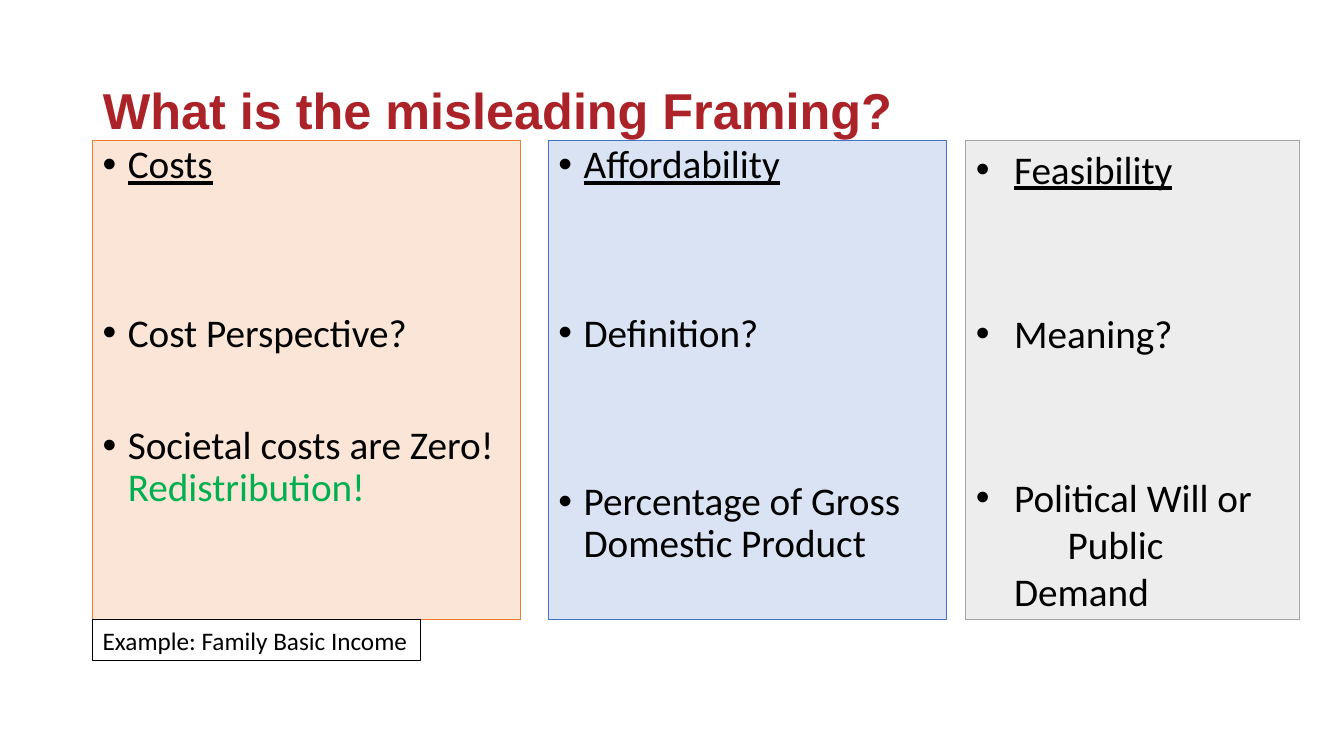
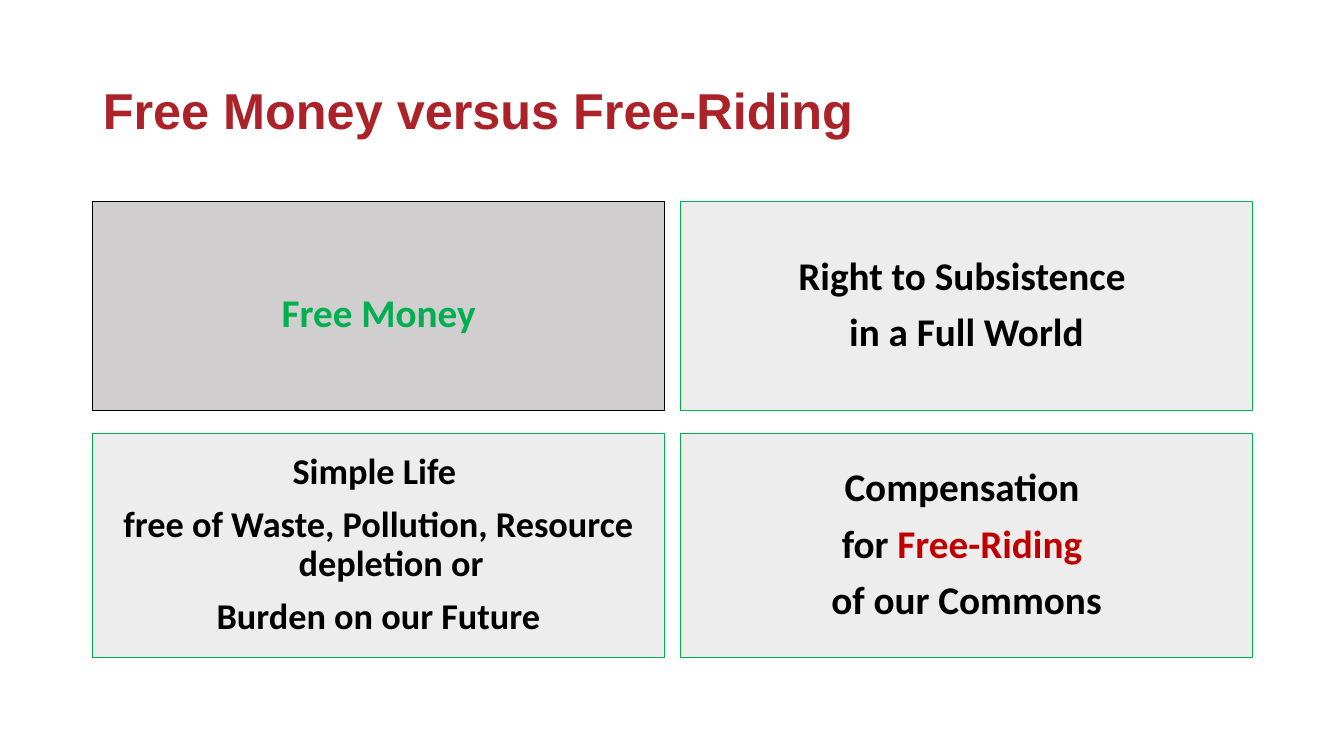
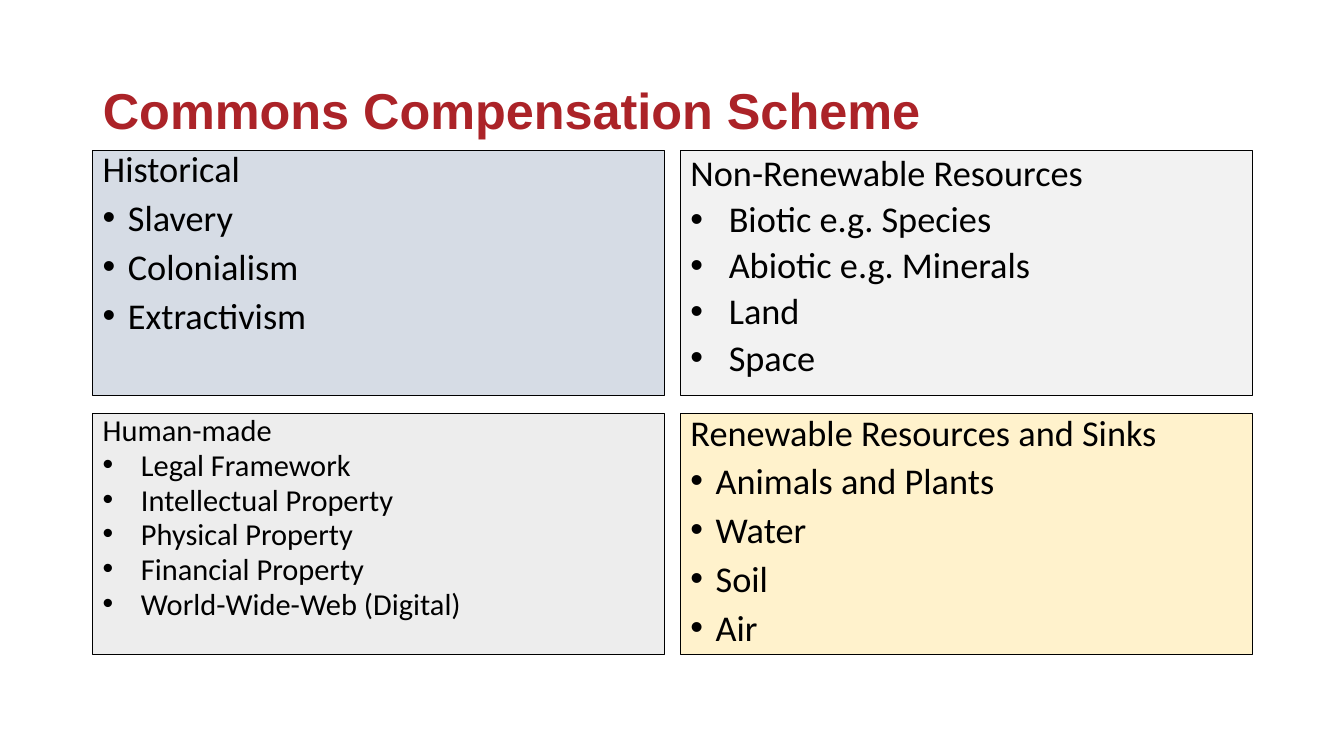
from dataclasses import dataclass
from typing import Sequence

from lxml import etree
from pptx import Presentation
from pptx.dml.color import RGBColor
from pptx.enum.shapes import MSO_SHAPE
from pptx.enum.text import MSO_ANCHOR, MSO_AUTO_SIZE, PP_ALIGN
from pptx.oxml.ns import qn
from pptx.util import Inches, Pt

RECTANGLE = MSO_SHAPE.RECTANGLE
TOP, MIDDLE = MSO_ANCHOR.TOP, MSO_ANCHOR.MIDDLE
LEFT, CENTER = PP_ALIGN.LEFT, PP_ALIGN.CENTER
FIXED_SIZE = MSO_AUTO_SIZE.NONE

# Shared look
TITLE_FONT, BODY_FONT = "Arial", "Calibri"
BLACK, TITLE_RED, GREEN, RED = "000000", "AB2328", "00B050", "C00000"
PALE_GREY = "EDEDED"

# Shared grid, in inches
SLIDE_WIDTH, SLIDE_HEIGHT = 13.33, 7.5
MARGIN, CONTENT_WIDTH = 0.92, 11.5
GUTTER = 0.16
CELL_WIDTH = (CONTENT_WIDTH - GUTTER) / 2
CELL_LEFTS = [MARGIN + column * (CELL_WIDTH + GUTTER) for column in range(2)]


@dataclass
class Line:
    """One paragraph: text, an optional coloured ending and the gap above."""
    text: str
    accent: str = ""
    accent_color: str = BLACK
    bullet: bool = False
    underline: bool = False
    gap: float | None = None
    tab: float | None = None


@dataclass
class Style:
    """Text settings of a panel."""
    size: float = 28
    color: str = BLACK
    bold: bool = False
    align: PP_ALIGN = LEFT
    anchor: MSO_ANCHOR = TOP
    indent: float = 0.25
    spacing: float = 0.9
    gap: float = 10
    top_inset: float = 0.05
    wrap: bool = True


@dataclass
class Panel:
    """A framed rectangle with text."""
    left: float
    top: float
    width: float
    height: float
    fill: str
    border: str
    style: Style
    lines: Sequence[Line]


def rgb(value: str) -> RGBColor:
    return RGBColor.from_string(value)


def bulleted(*texts: str) -> list[Line]:
    return [Line(text, bullet=True) for text in texts]


def format_span(span, size: float, color: str, bold: bool, font: str = BODY_FONT) -> None:
    span.font.name = font
    span.font.size = Pt(size)
    span.font.bold = bold
    span.font.color.rgb = rgb(color)


def set_marks(para, indent: float, bullet: bool, tab: float | None) -> None:
    """Set the hanging indent, bullet and tab stop of a paragraph."""
    properties = para._p.get_or_add_pPr()
    properties.set("marL", str(Inches(indent)))
    properties.set("indent", str(-Inches(indent)))
    if bullet:
        etree.SubElement(properties, qn("a:buFont"), typeface="Arial")
        etree.SubElement(properties, qn("a:buChar"), char="•")
    else:
        etree.SubElement(properties, qn("a:buNone"))
    if tab is not None:
        stops = etree.SubElement(properties, qn("a:tabLst"))
        etree.SubElement(stops, qn("a:tab"), pos=str(Inches(tab)), algn="l")


def write_line(para, line: Line, style: Style, first: bool) -> None:
    para.text = line.text
    set_marks(para, style.indent, line.bullet, line.tab)
    para.alignment = style.align
    para.line_spacing = style.spacing
    if not first:
        para.space_before = Pt(style.gap if line.gap is None else line.gap)
    for span in para.runs:
        format_span(span, style.size, style.color, style.bold)
        span.font.underline = line.underline
    if line.accent:
        span = para.add_run()
        span.text = line.accent
        format_span(span, style.size, line.accent_color, style.bold)


def draw_panel(page, panel: Panel) -> None:
    box = page.shapes.add_shape(
        RECTANGLE, Inches(panel.left), Inches(panel.top),
        Inches(panel.width), Inches(panel.height))
    box.shadow.inherit = False
    if panel.fill:
        box.fill.solid()
        box.fill.fore_color.rgb = rgb(panel.fill)
    else:
        box.fill.background()
    box.line.color.rgb = rgb(panel.border)
    box.line.width = Pt(0.75)
    frame = box.text_frame
    frame.word_wrap = panel.style.wrap
    frame.vertical_anchor = panel.style.anchor
    frame.margin_top = Inches(panel.style.top_inset)
    for index, line in enumerate(panel.lines):
        para = frame.add_paragraph() if index else frame.paragraphs[0]
        write_line(para, line, panel.style, first=index == 0)


def add_page(deck, title: str, panels: Sequence[Panel]) -> None:
    page = deck.slides.add_slide(deck.slide_layouts[5])
    heading = page.shapes.title
    heading.left, heading.top = Inches(MARGIN), Inches(0.4)
    heading.width, heading.height = Inches(CONTENT_WIDTH), Inches(1.45)
    frame = heading.text_frame
    frame.text = title
    frame.auto_size = FIXED_SIZE
    frame.vertical_anchor = MIDDLE
    para = frame.paragraphs[0]
    para.alignment = LEFT
    para.line_spacing = 0.9
    format_span(para.runs[0], 36, TITLE_RED, True, TITLE_FONT)
    for panel in panels:
        draw_panel(page, panel)


def framing_panels() -> list[Panel]:
    top, height = 1.39, 4.76
    plain = Style()
    loose = Style(indent=0.38, spacing=1)
    caption = Style(size=18, indent=0, spacing=1, wrap=False)
    costs = [
        Line("Costs", bullet=True, underline=True),
        Line("Cost Perspective?", bullet=True, gap=90),
        Line("Societal costs are Zero! ", "Redistribution!", GREEN, bullet=True, gap=50),
    ]
    affordability = [
        Line("Affordability", bullet=True, underline=True),
        Line("Definition?", bullet=True, gap=90),
        Line("Percentage of Gross Domestic Product", bullet=True, gap=90),
    ]
    feasibility = [
        Line("Feasibility", bullet=True, underline=True),
        Line("Meaning?", bullet=True, gap=83.5),
        Line("Political Will or\v\tPublic Demand", bullet=True, gap=83.5, tab=0.91),
    ]
    return [
        Panel(MARGIN, top, 4.24, height, "FBE5D6", "ED7D31", plain, costs),
        Panel(5.44, top, 3.95, height, "DAE3F3", "4472C4", plain, affordability),
        Panel(9.58, top, 3.31, height, PALE_GREY, "A5A5A5", loose, feasibility),
        Panel(MARGIN, top + height, 3.25, 0.4, "", BLACK, caption,
              [Line("Example: Family Basic Income")]),
    ]


def free_riding_panels() -> list[Panel]:
    (upper, upper_height), (lower, lower_height) = (2, 2.07), (4.3, 2.22)
    left, right = CELL_LEFTS
    bold = Style(bold=True, align=CENTER, anchor=MIDDLE)
    small = Style(size=25.9, bold=True, align=CENTER, anchor=MIDDLE)
    green = Style(color=GREEN, bold=True, align=CENTER, anchor=MIDDLE, top_inset=0.23)
    simple_life = [
        Line("Simple Life "),
        Line("free of Waste, Pollution, Resource depletion or"),
        Line("Burden on our Future"),
    ]
    compensation = [
        Line("Compensation "),
        Line("for ", "Free-Riding ", RED),
        Line("of our Commons"),
    ]
    subsistence = [Line("Right to Subsistence "), Line("in a Full World")]
    return [
        Panel(left, upper, CELL_WIDTH, upper_height, "D0CECE", BLACK, green,
              [Line("Free Money")]),
        Panel(left, lower, CELL_WIDTH, lower_height, PALE_GREY, GREEN, small, simple_life),
        Panel(right, upper, CELL_WIDTH, upper_height, PALE_GREY, GREEN, bold, subsistence),
        Panel(right, lower, CELL_WIDTH, lower_height, PALE_GREY, GREEN, bold, compensation),
    ]


def commons_panels() -> list[Panel]:
    (upper, upper_height), (lower, lower_height) = (1.49, 2.43), (4.1, 2.39)
    left, right = CELL_LEFTS
    tight = Style(size=25.9, spacing=0.8)
    wide = Style(size=25.9, indent=0.38, gap=5)
    small = Style(size=21.7, indent=0.38, spacing=0.8, gap=4)
    historical = [Line("Historical"), *bulleted("Slavery", "Colonialism", "Extractivism")]
    human_made = [Line("Human-made"), *bulleted(
        "Legal Framework", "Intellectual Property", "Physical Property",
        "Financial Property", "World-Wide-Web (Digital)")]
    finite = [Line("Non-Renewable Resources"), *bulleted(
        "Biotic e.g. Species", "Abiotic e.g. Minerals", "Land", "Space")]
    renewable = [Line("Renewable Resources and Sinks"), *bulleted(
        "Animals and Plants", "Water", "Soil", "Air")]
    return [
        Panel(left, upper, CELL_WIDTH, upper_height, "D6DCE5", BLACK, tight, historical),
        Panel(left, lower, CELL_WIDTH, lower_height, PALE_GREY, BLACK, small, human_made),
        Panel(right, upper, CELL_WIDTH, upper_height, "F2F2F2", BLACK, wide, finite),
        Panel(right, lower, CELL_WIDTH, lower_height, "FFF2CC", BLACK, tight, renewable),
    ]


def main() -> None:
    deck = Presentation()
    deck.slide_width, deck.slide_height = Inches(SLIDE_WIDTH), Inches(SLIDE_HEIGHT)
    add_page(deck, "What is the misleading Framing?", framing_panels())
    add_page(deck, "Free Money versus Free-Riding", free_riding_panels())
    add_page(deck, "Commons Compensation Scheme", commons_panels())
    deck.save("out.pptx")


if __name__ == "__main__":
    main()
